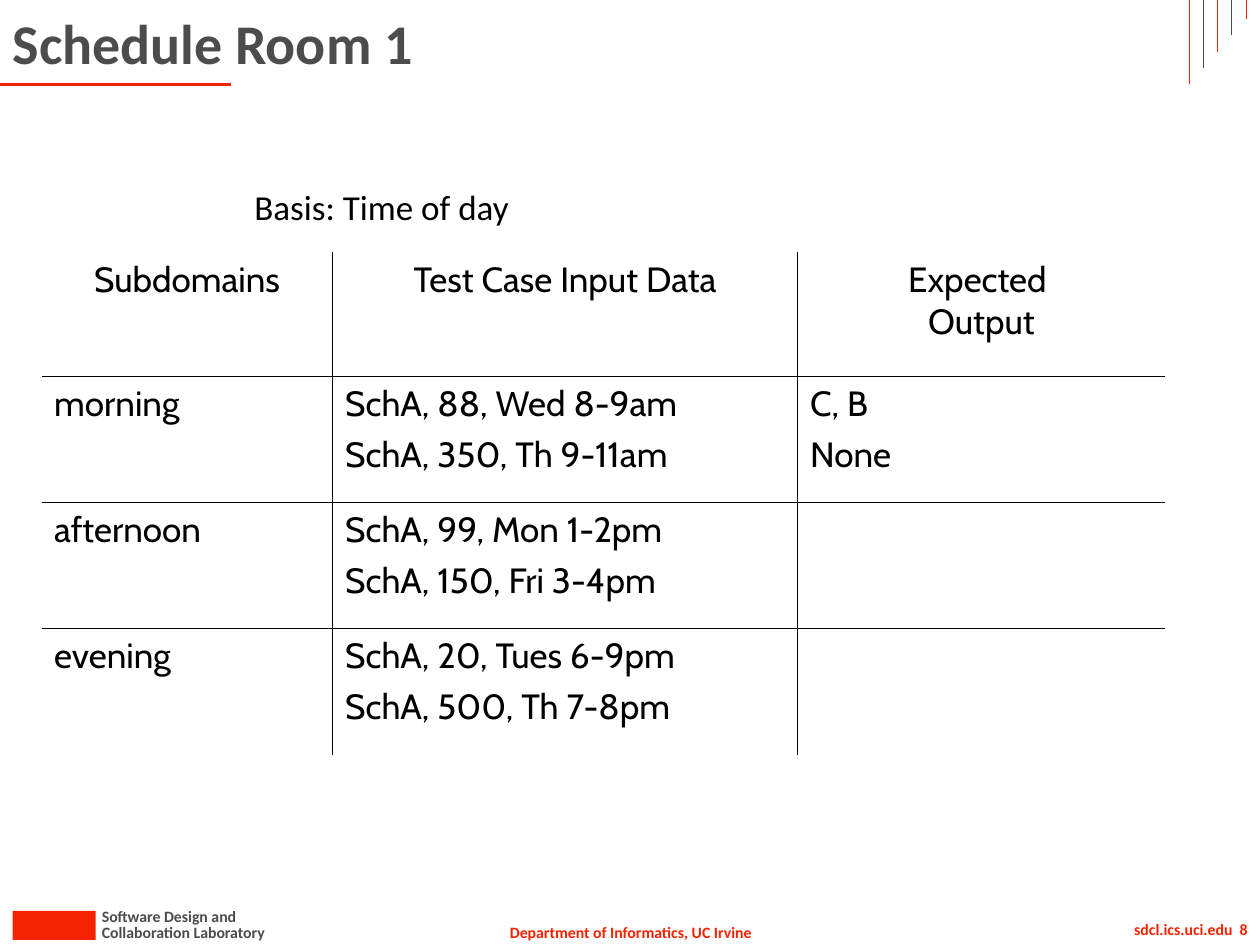
import dataclasses
import lxml.etree
import pptx
import pptx.dml.color
import pptx.enum.shapes
import pptx.enum.text
import pptx.oxml.ns
import pptx.util

Inches = pptx.util.Inches
Pt = pptx.util.Pt
Align = pptx.enum.text.PP_ALIGN
qn = pptx.oxml.ns.qn

RED = pptx.dml.color.RGBColor(0xF3, 0x22, 0x00)
GREY = pptx.dml.color.RGBColor(0x4C, 0x4C, 0x4C)
BLACK = pptx.dml.color.RGBColor(0, 0, 0)


@dataclasses.dataclass(frozen=True)
class Label:
    text: str
    left: float
    top: float
    width: float
    height: float
    size: float
    color: pptx.dml.color.RGBColor
    bold: bool = True
    align: Align = Align.LEFT
    wrap: bool = False


@dataclasses.dataclass(frozen=True)
class Rule:
    start: tuple[float, float]
    end: tuple[float, float]
    color: pptx.dml.color.RGBColor
    weight: float


LABELS = [
    Label("Department of Informatics, UC Irvine", 3.93, 7.27, 2.15, 0.25, 9, RED, align=Align.CENTER),
    Label("Collaboration Laboratory", 0.71, 7.27, 1.53, 0.25, 9, GREY),
    Label("Software Design and", 0.71, 7.15, 1.29, 0.25, 9, GREY),
    Label("sdcl.ics.uci.edu  8", 7.84, 7.25, 2.16, 0.25, 9, RED, align=Align.RIGHT, wrap=True),
    Label("Basis: Time of day", 1.92, 1.42, 2.25, 0.44, 20, BLACK, bold=False),
]

TITLE_RULE = Rule((0, 0.67), (1.83, 0.67), RED, 1.5)
CORNER_RULES = [
    Rule((9.44 + 0.1125 * step, 0.67 - 0.13 * step), (9.44 + 0.1125 * step, 0),
         GREY if step % 2 else RED, 0.5)
    for step in range(5)
]

COLUMN_WIDTHS = [2.31, 3.69, 2.92]
ROW_HEIGHTS = [0.99, 1, 1, 1]
SCHEDULE = [
    ["Subdomains", "Test Case Input Data", "Expected \vOutput"],
    ["morning", "SchA, 88, Wed 8-9am\nSchA, 350, Th 9-11am", "C, B\nNone"],
    ["afternoon", "SchA, 99, Mon 1-2pm\nSchA, 150, Fri 3-4pm", ""],
    ["evening", "SchA, 20, Tues 6-9pm\nSchA, 500, Th 7-8pm", ""],
]


def format_font(font, face: str, size: float, color, bold: bool) -> None:
    for attribute, value in {"name": face, "size": Pt(size), "bold": bold}.items():
        setattr(font, attribute, value)
    font.color.rgb = color


def draw_label(slide, label: Label) -> None:
    box = slide.shapes.add_textbox(*map(Inches, (label.left, label.top, label.width, label.height)))
    box.text_frame.word_wrap = label.wrap
    line = box.text_frame.paragraphs[0]
    line.text = label.text
    line.alignment = label.align
    format_font(line.runs[0].font, "Calibri", label.size, label.color, label.bold)


def draw_rule(slide, rule: Rule) -> None:
    stroke = slide.shapes.add_connector(
        pptx.enum.shapes.MSO_CONNECTOR.STRAIGHT, *map(Inches, rule.start + rule.end))
    stroke.line.color.rgb = rule.color
    stroke.line.width = Pt(rule.weight)
    lxml.etree.SubElement(stroke.element.spPr, qn("a:effectLst"))


def draw_footer_block(slide) -> None:
    block = slide.shapes.add_shape(
        pptx.enum.shapes.MSO_SHAPE.RECTANGLE, *map(Inches, (0.1, 7.23, 0.66, 0.23)))
    block.shadow.inherit = False
    block.fill.solid()
    block.fill.fore_color.rgb = RED
    block.line.fill.background()


def set_borders(cell, visible: dict[str, bool]) -> None:
    properties = cell._tc.get_or_add_tcPr()
    for position, (side, shown) in enumerate(visible.items()):
        border = properties.makeelement(qn(f"a:ln{side}"), {"w": str(Pt(1))})
        if shown:
            fill = lxml.etree.SubElement(border, qn("a:solidFill"))
            lxml.etree.SubElement(fill, qn("a:srgbClr"), val=str(BLACK))
        else:
            lxml.etree.SubElement(border, qn("a:noFill"))
        properties.insert(position, border)


def draw_schedule(slide) -> None:
    last_row, last_column = len(ROW_HEIGHTS) - 1, len(COLUMN_WIDTHS) - 1
    schedule = slide.shapes.add_table(
        len(ROW_HEIGHTS), len(COLUMN_WIDTHS), Inches(0.33), Inches(2),
        Inches(sum(COLUMN_WIDTHS)), Inches(sum(ROW_HEIGHTS))).table
    schedule.first_row = schedule.horz_banding = False
    for column, width in zip(schedule.columns, COLUMN_WIDTHS):
        column.width = Inches(width)
    for row, height in zip(schedule.rows, ROW_HEIGHTS):
        row.height = Inches(height)
    for r, entries in enumerate(SCHEDULE):
        for c, entry in enumerate(entries):
            cell = schedule.cell(r, c)
            cell.text = entry
            cell.fill.background()
            set_borders(cell, {"L": c > 0, "R": c < last_column, "T": r > 0, "B": r < last_row})
            for line in cell.text_frame.paragraphs:
                line.alignment = Align.LEFT if r else Align.CENTER
                line.space_before = Pt(4.4)
                format_font(line.font, "Cabin", 20, BLACK, False)
                for run in line.runs:
                    format_font(run.font, "Cabin", 20, BLACK, False)


def draw_title(slide) -> None:
    title = slide.shapes.title
    place = {"left": 0, "top": 0, "width": 9, "height": 0.67}
    for attribute, value in place.items():
        setattr(title, attribute, Inches(value))
    frame = title.text_frame
    frame.text = "Schedule Room 1"
    frame.vertical_anchor = pptx.enum.text.MSO_ANCHOR.MIDDLE
    frame.auto_size = pptx.enum.text.MSO_AUTO_SIZE.NONE
    frame.paragraphs[0].alignment = Align.LEFT
    format_font(frame.paragraphs[0].runs[0].font, "Calibri", 32, GREY, True)


def main() -> None:
    deck = pptx.Presentation()
    deck.slide_width, deck.slide_height = Inches(10), Inches(7.5)
    slide = deck.slides.add_slide(deck.slide_layouts[5])
    draw_title(slide)
    for rule in [TITLE_RULE, *CORNER_RULES]:
        draw_rule(slide, rule)
    draw_footer_block(slide)
    draw_schedule(slide)
    for label in LABELS:
        draw_label(slide, label)
    deck.save("out.pptx")


if __name__ == "__main__":
    main()
